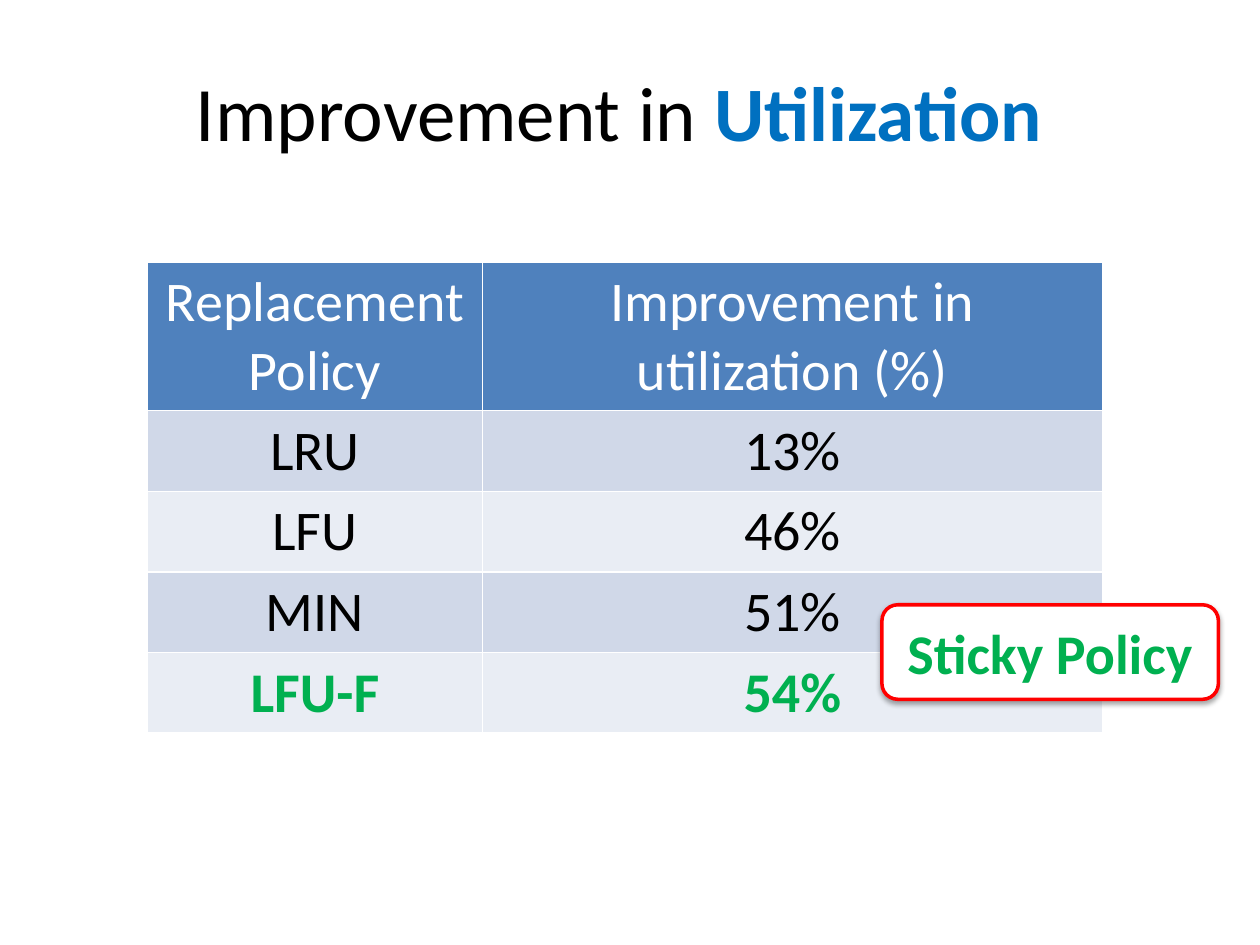
from dataclasses import dataclass

import pptx
import pptx.dml.color
import pptx.enum.shapes
import pptx.enum.text
import pptx.oxml
import pptx.oxml.ns
import pptx.util

Inches = pptx.util.Inches
FONT = "Calibri"
COLORS = {
    "black": "000000",
    "white": "FFFFFF",
    "blue": "0070C0",
    "green": "00B050",
    "red": "FF0000",
    "header": "4F81BD",
    "odd": "D0D8E8",
    "even": "E9EDF4",
}


@dataclass(frozen=True)
class Span:
    text: str
    color: str = "black"
    bold: bool = False


@dataclass(frozen=True)
class Row:
    policy: str
    improvement: str
    fill: str
    color: str = "black"
    bold: bool = False
    height: float = 0.64


ROWS = [
    Row("Replacement Policy", "Improvement in utilization (%)", "header", "white", height=1.18),
    Row("LRU", "13%", "odd"),
    Row("LFU", "46%", "even"),
    Row("MIN", "51%", "odd"),
    Row("LFU-F", "54%", "even", "green", True),
]
COLUMN_WIDTHS = [2.66, 4.92]


def rgb(name: str) -> pptx.dml.color.RGBColor:
    return pptx.dml.color.RGBColor.from_string(COLORS[name])


def write(frame, spans: list[Span], size: int) -> None:
    """Fill a text frame with one centred paragraph."""
    frame.word_wrap = True
    para = frame.paragraphs[0]
    para.alignment = pptx.enum.text.PP_ALIGN.CENTER
    for span in spans:
        run = para.add_run()
        run.text = span.text
        run.font.name = FONT
        run.font.size = pptx.util.Pt(size)
        run.font.bold = span.bold
        run.font.color.rgb = rgb(span.color)


def add_borders(cell, color: str, width: float) -> None:
    properties = cell._tc.get_or_add_tcPr()
    for position, side in enumerate(("lnL", "lnR", "lnT", "lnB")):
        border = pptx.oxml.parse_xml(
            f'<a:{side} {pptx.oxml.ns.nsdecls("a")} w="{pptx.util.Pt(width)}"><a:solidFill>'
            f'<a:srgbClr val="{COLORS[color]}"/></a:solidFill></a:{side}>'
        )
        properties.insert(position, border)


def add_title(page) -> None:
    box = page.shapes.add_textbox(Inches(0.33), Inches(0.25), Inches(9.17), Inches(1.25))
    box.text_frame.vertical_anchor = pptx.enum.text.MSO_ANCHOR.MIDDLE
    write(box.text_frame, [Span("Improvement in "), Span("Utilization", "blue", True)], 44)


def add_policy_table(page) -> None:
    frame = page.shapes.add_table(
        len(ROWS), len(COLUMN_WIDTHS), Inches(1.17), Inches(2.08),
        Inches(sum(COLUMN_WIDTHS)), Inches(sum(row.height for row in ROWS)),
    )
    table = frame.table
    for column, width in zip(table.columns, COLUMN_WIDTHS):
        column.width = Inches(width)
    for row_index, row in enumerate(ROWS):
        table.rows[row_index].height = Inches(row.height)
        for column_index, text in enumerate((row.policy, row.improvement)):
            cell = table.cell(row_index, column_index)
            cell.fill.solid()
            cell.fill.fore_color.rgb = rgb(row.fill)
            add_borders(cell, "white", 1)
            write(cell.text_frame, [Span(text, row.color, row.bold)], 32)


def add_callout(page) -> None:
    callout = page.shapes.add_shape(
        pptx.enum.shapes.MSO_SHAPE.ROUNDED_RECTANGLE,
        Inches(7), Inches(4.8), Inches(2.67), Inches(0.75),
    )
    callout.fill.solid()
    callout.fill.fore_color.rgb = rgb("white")
    callout.line.color.rgb = rgb("red")
    callout.line.width = pptx.util.Pt(2)
    callout.text_frame.vertical_anchor = pptx.enum.text.MSO_ANCHOR.MIDDLE
    write(callout.text_frame, [Span("Sticky Policy", "green", True)], 32)
    # Soft shadow straight below the callout
    callout.shadow.inherit = False
    effects = callout._element.spPr.find(pptx.oxml.ns.qn("a:effectLst"))
    effects.append(pptx.oxml.parse_xml(
        f'<a:outerShdw {pptx.oxml.ns.nsdecls("a")} blurRad="{pptx.util.Pt(3.1)}" '
        f'dist="{pptx.util.Pt(1.8)}" dir="5400000" rotWithShape="0">'
        f'<a:srgbClr val="{COLORS["black"]}"><a:alpha val="35000"/></a:srgbClr></a:outerShdw>'
    ))


def main() -> None:
    deck = pptx.Presentation()
    deck.slide_width = Inches(10)
    deck.slide_height = Inches(7.5)
    page = deck.slides.add_slide(deck.slide_layouts[6])
    add_title(page)
    add_policy_table(page)
    add_callout(page)
    deck.save("out.pptx")


if __name__ == "__main__":
    main()
